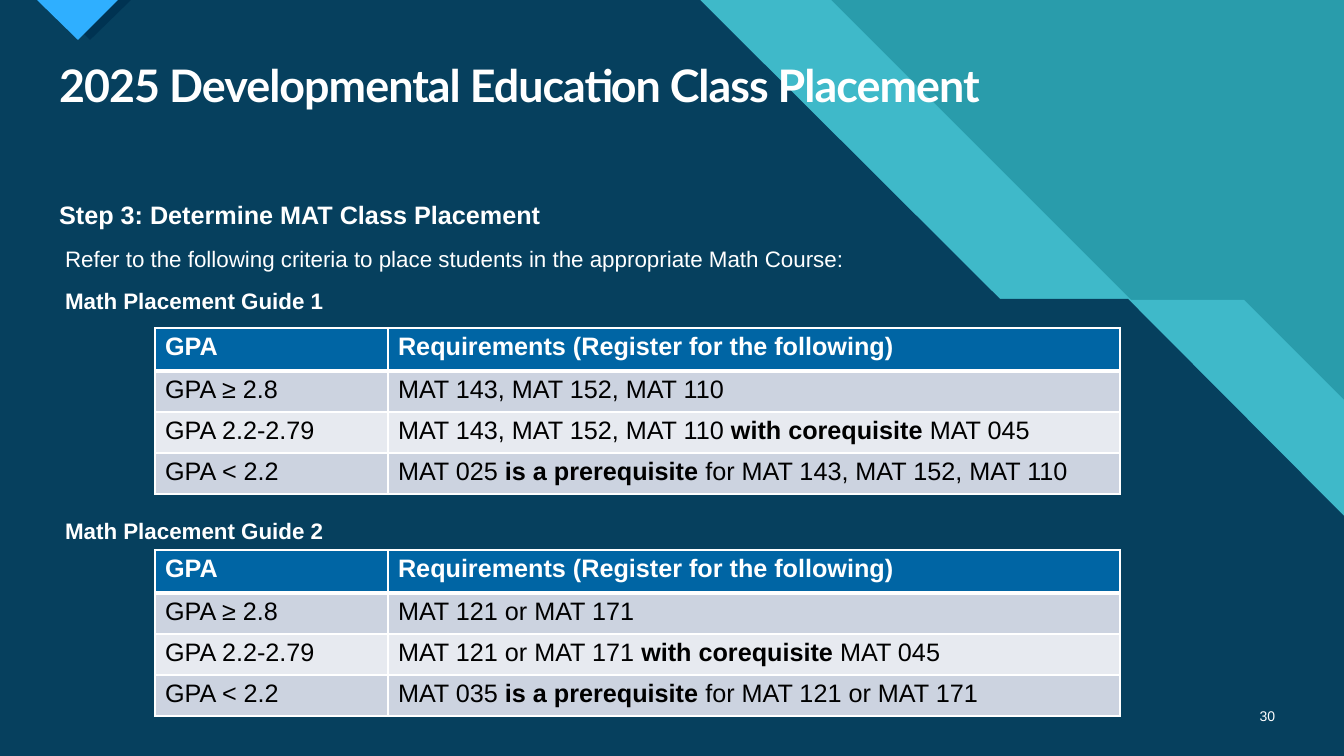
import pptx
import pptx.dml.color
import pptx.enum.text
import pptx.oxml.ns
import pptx.util
from lxml import etree

RGBColor = pptx.dml.color.RGBColor
WHITE = RGBColor(0xFF, 0xFF, 0xFF)
BLACK = RGBColor(0x00, 0x00, 0x00)
TEAL = RGBColor(0x29, 0x9C, 0xAB)
BAND = RGBColor(0x3F, 0xB9, 0xC9)
NAVY = RGBColor(0x06, 0x40, 0x5E)
DARK_NAVY = RGBColor(0x00, 0x33, 0x52)
SKY = RGBColor(0x2F, 0xAF, 0xFF)
HEADER_BLUE = RGBColor(0x00, 0x65, 0xA4)
ROW_FILLS = (RGBColor(0xCC, 0xD3, 0xE0), RGBColor(0xE7, 0xEA, 0xF0))

SLIDE_WIDTH, SLIDE_HEIGHT = 1344, 756
PX = 12192000 / SLIDE_WIDTH

HEADER = ("GPA", ["Requirements (Register for the following)"])
# Every second piece of a requirement is bold
GUIDE_1 = [
    HEADER,
    ("GPA ≥ 2.8", ["MAT 143, MAT 152, MAT 110"]),
    ("GPA 2.2-2.79", ["MAT 143, MAT 152, MAT 110 ", "with corequisite", " MAT 045"]),
    ("GPA < 2.2", ["MAT 025 ", "is a prerequisite ", "for MAT 143, MAT 152, MAT 110"]),
]
GUIDE_2 = [
    HEADER,
    ("GPA ≥ 2.8", ["MAT 121 or MAT 171"]),
    ("GPA 2.2-2.79", ["MAT 121 or MAT 171 ", "with corequisite", " MAT 045"]),
    ("GPA < 2.2", ["MAT 035 ", "is a prerequisite ", "for MAT 121 or MAT 171"]),
]
# Text, level, size, bold, space before
BODY_LINES = [
    ("Step 3: Determine MAT Class Placement", 0, 18, True, 6),
    ("Refer to the following criteria to place students in the appropriate Math Course:",
     1, 16, False, 6),
    ("Math Placement Guide 1", 1, 16, True, 6),
    ("Math Placement Guide 2", 1, 16, True, 140),
]


def px(length):
    return pptx.util.Emu(round(length * PX))


def place(shape, box):
    shape.left, shape.top, shape.width, shape.height = map(px, box)


def format_run(run, size, color, bold=False, font_name="Arial"):
    run.font.name = font_name
    run.font.size = pptx.util.Pt(size)
    run.font.bold = bold
    run.font.color.rgb = color


def add_polygon(slide, box, points, color):
    left, top = box[:2]
    corners = [(left + x, top + y) for x, y in points]
    builder = slide.shapes.build_freeform(*corners[0], scale=PX)
    builder.add_line_segments(corners[1:], close=True)
    shape = builder.convert_to_shape()
    shape.shadow.inherit = False
    shape.fill.solid()
    shape.fill.fore_color.rgb = color
    shape.line.fill.background()


def add_backdrop(slide, box):
    width, height = box[2:]
    slide.background.fill.solid()
    slide.background.fill.fore_color.rgb = TEAL
    # Light band, with the navy field over it
    edges = [
        ([(831, 0), (1131, 300), (1244, 300), (width, 400)], BAND),
        ([(700, 0), (1000, 299), (1128, 299), (width, 516)], NAVY),
    ]
    for edge, color in edges:
        add_polygon(slide, box, [(0, 0), *edge, (width, height), (0, height)], color)


def add_corner_marker(slide, box):
    width, height = box[2:]
    # Shadow, then the blue wedge
    for offset, color in ((13, DARK_NAVY), (0, SKY)):
        wedge = [(offset, 0), (offset + width, 0), (offset + width / 2, height)]
        add_polygon(slide, box, wedge, color)


def add_title(slide, box):
    title = slide.shapes.title
    place(title, box)
    frame = title.text_frame
    frame.text = "2025 Developmental Education Class Placement"
    frame.auto_size = pptx.enum.text.MSO_AUTO_SIZE.NONE
    frame.vertical_anchor = pptx.enum.text.MSO_ANCHOR.TOP
    paragraph = frame.paragraphs[0]
    paragraph.alignment = pptx.enum.text.PP_ALIGN.LEFT
    paragraph.line_spacing = 0.9
    run = paragraph.runs[0]
    format_run(run, 32, WHITE, True, "Lato")
    run._r.get_or_add_rPr().set("spc", "-70")


def add_body(slide, box):
    body = slide.placeholders[1]
    place(body, box)
    frame = body.text_frame
    frame.text = "\n".join(line[0] for line in BODY_LINES)
    frame.auto_size = pptx.enum.text.MSO_AUTO_SIZE.NONE
    frame.vertical_anchor = pptx.enum.text.MSO_ANCHOR.TOP
    for paragraph, line in zip(frame.paragraphs, BODY_LINES):
        level, size, bold, space_before = line[1:]
        paragraph.level = level
        paragraph.line_spacing = 1.06
        paragraph.space_before = pptx.util.Pt(space_before)
        paragraph.space_after = pptx.util.Pt(4)
        format_run(paragraph.runs[0], size, WHITE, bold)
        # Small indent and no bullet
        properties = paragraph._p.get_or_add_pPr()
        properties.set("marL", str(px(6 * level)))
        properties.set("indent", "0")
        etree.SubElement(properties, pptx.oxml.ns.qn("a:buNone"))


def set_borders(cell, top, bottom):
    properties = cell._tc.get_or_add_tcPr()
    widths = {"lnL": 1, "lnR": 1, "lnT": top, "lnB": bottom}
    for index, (side, width) in enumerate(widths.items()):
        line = etree.Element(pptx.oxml.ns.qn(f"a:{side}"), w=str(pptx.util.Pt(width)))
        fill = etree.SubElement(line, pptx.oxml.ns.qn("a:solidFill"))
        etree.SubElement(fill, pptx.oxml.ns.qn("a:srgbClr"), val=str(WHITE))
        properties.insert(index, line)


def add_guide_table(slide, box, rows):
    width, height = box[2:]
    gpa_width, row_height = 233, 41
    table = slide.shapes.add_table(len(rows), 2, *map(px, box)).table
    table.columns[0].width = px(gpa_width)
    table.columns[1].width = px(width - gpa_width)
    for row_index, (gpa, requirement) in enumerate(rows):
        is_header = row_index == 0
        header_height = height - row_height * (len(rows) - 1)
        table.rows[row_index].height = px(header_height if is_header else row_height)
        for column_index, pieces in enumerate(([gpa], requirement)):
            cell = table.cell(row_index, column_index)
            cell.fill.solid()
            cell.fill.fore_color.rgb = HEADER_BLUE if is_header else ROW_FILLS[(row_index - 1) % 2]
            set_borders(cell, 3 if row_index == 1 else 1, 3 if is_header else 1)
            paragraph = cell.text_frame.paragraphs[0]
            for piece_index, piece in enumerate(pieces):
                run = paragraph.add_run()
                run.text = piece
                format_run(run, 18, WHITE if is_header else BLACK,
                           is_header or piece_index % 2 == 1)


def add_slide_number(slide, box):
    frame = slide.shapes.add_textbox(*map(px, box)).text_frame
    frame.word_wrap = True
    frame.vertical_anchor = pptx.enum.text.MSO_ANCHOR.MIDDLE
    frame.text = "30"
    paragraph = frame.paragraphs[0]
    paragraph.alignment = pptx.enum.text.PP_ALIGN.RIGHT
    format_run(paragraph.runs[0], 10, WHITE)


def main():
    presentation = pptx.Presentation()
    presentation.slide_width = px(SLIDE_WIDTH)
    presentation.slide_height = px(SLIDE_HEIGHT)
    slide = presentation.slides.add_slide(presentation.slide_layouts[1])
    add_backdrop(slide, (0, 0, SLIDE_WIDTH, SLIDE_HEIGHT))
    add_corner_marker(slide, (37, 0, 81, 40))
    add_title(slide, (49, 59, 1236, 59))
    add_body(slide, (49, 192, 1279, 355))
    for top, rows in ((328, GUIDE_1), (550, GUIDE_2)):
        add_guide_table(slide, (155, top, 965, 166), rows)
    add_slide_number(slide, (1241, 696, 44, 40))
    # Bring the placeholders' text above the backdrop
    tree = slide.shapes._spTree
    for placeholder in list(slide.placeholders):
        tree.append(placeholder._element)
    presentation.save("out.pptx")


if __name__ == "__main__":
    main()
